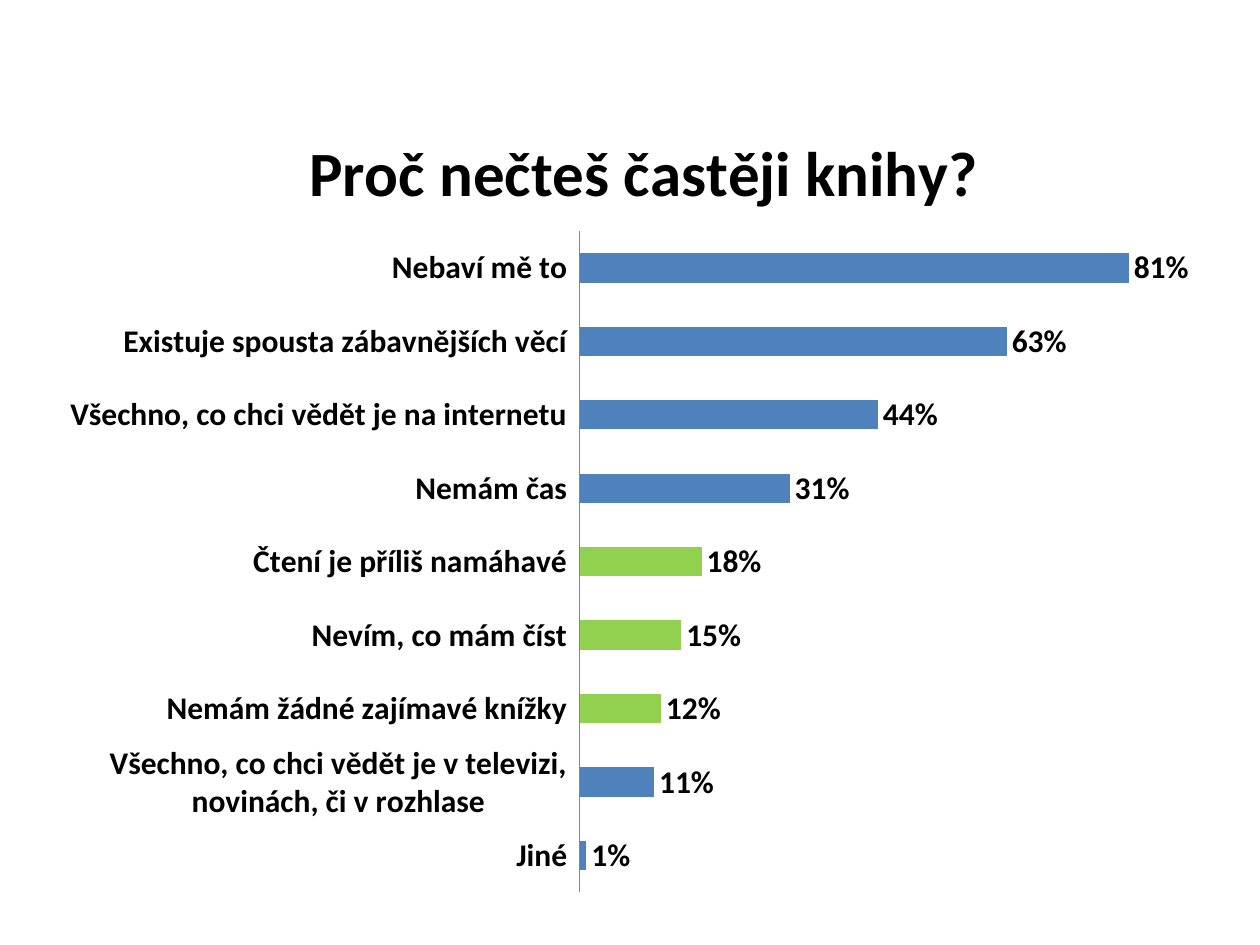
"""Build a slide with a bar chart of the reasons for not reading books more often."""
from lxml.etree import SubElement
from pptx import Presentation
from pptx.chart.data import CategoryChartData
from pptx.dml.color import RGBColor
from pptx.enum.chart import XL_CHART_TYPE as ChartType
from pptx.enum.chart import XL_LABEL_POSITION as LabelPosition
from pptx.enum.chart import XL_TICK_LABEL_POSITION as TickLabelPosition
from pptx.enum.chart import XL_TICK_MARK as TickMark
from pptx.oxml.ns import qn
from pptx.util import Cm, Pt

BLACK = RGBColor(0x00, 0x00, 0x00)
GRAY = RGBColor(0x86, 0x86, 0x86)
BLUE = RGBColor(0x4F, 0x81, 0xBD)
GREEN = RGBColor(0x92, 0xD0, 0x50)

TITLE = "Proč nečteš častěji knihy?"
REASONS = [
    ("Nebaví mě to", 0.81, BLUE),
    ("Existuje spousta zábavnějších věcí", 0.63, BLUE),
    ("Všechno, co chci vědět je na internetu", 0.44, BLUE),
    ("Nemám čas", 0.31, BLUE),
    ("Čtení je příliš namáhavé", 0.18, GREEN),
    ("Nevím, co mám číst", 0.15, GREEN),
    ("Nemám žádné zajímavé knížky", 0.12, GREEN),
    ("Všechno, co chci vědět je v televizi, novinách, či v rozhlase", 0.11, BLUE),
    ("Jiné", 0.01, BLUE),
]
PERCENT = "0%"


def format_font(font, size, bold=True, color=BLACK):
    font.name = "Calibri"
    font.size = Pt(size)
    font.bold = bold
    font.color.rgb = color


def write_text(text_frame, text, **style):
    run = text_frame.paragraphs[0].add_run()
    run.text = text
    format_font(run.font, **style)


def set_layout(parent, index, **values):
    for old in parent.findall(qn("c:layout")):
        parent.remove(old)
    layout = SubElement(parent, qn("c:layout"))
    parent.insert(index, layout)
    manual = SubElement(layout, qn("c:manualLayout"))
    for name, value in values.items():
        SubElement(manual, qn(f"c:{name}")).set("val", str(value))


def style_axes(chart):
    categories = chart.category_axis
    categories.reverse_order = True
    categories.major_tick_mark = TickMark.NONE
    categories.minor_tick_mark = TickMark.NONE
    categories.tick_label_position = TickLabelPosition.LOW
    categories.format.line.color.rgb = GRAY
    categories.format.line.width = Pt(0.75)
    format_font(categories.tick_labels.font, 18)
    values = chart.value_axis
    values.minimum_scale, values.maximum_scale = 0, 0.9
    values.has_major_gridlines = False
    values.visible = False


def style_bars(plot):
    plot.gap_width = 150
    plot.overlap = -25
    plot.vary_by_categories = False
    series = plot.series[0]
    series.format.fill.solid()
    series.format.fill.fore_color.rgb = BLUE
    for index, (_, _, color) in enumerate(REASONS):
        if color != BLUE:
            fill = series.points[index].format.fill
            fill.solid()
            fill.fore_color.rgb = color
    labels = series.data_labels
    labels.show_value = True
    labels.number_format = PERCENT
    labels.number_format_is_linked = False
    labels.position = LabelPosition.OUTSIDE_END
    format_font(labels.font, 18)


def main():
    presentation = Presentation()
    presentation.slide_width, presentation.slide_height = Cm(25.4), Cm(19.05)
    slide = presentation.slides.add_slide(presentation.slide_layouts[6])
    data = CategoryChartData(number_format=PERCENT)
    data.categories = [reason for reason, _, _ in REASONS]
    data.add_series("Series 1", [share for _, share, _ in REASONS])
    chart = slide.shapes.add_chart(
        ChartType.BAR_CLUSTERED, Cm(1.09), Cm(1.52), Cm(23.39), Cm(16.79), data
    ).chart
    format_font(chart.font, 10, bold=False)
    chart.has_legend = False
    chart.has_title = True
    write_text(chart.chart_title.text_frame, TITLE, size=36)
    chart.chart_title.include_in_layout = False
    set_layout(chart.chart_title.element, 1, xMode="edge", yMode="edge", x=0.21, y=0.05)
    style_axes(chart)
    style_bars(chart.plots[0])
    plot_area = chart.element.find(f".//{qn('c:plotArea')}")
    set_layout(plot_area, 0, layoutTarget="inner", xMode="edge", yMode="edge",
               x=0.453, y=0.187, w=0.526, h=0.794)
    presentation.save("out.pptx")


if __name__ == "__main__":
    main()
